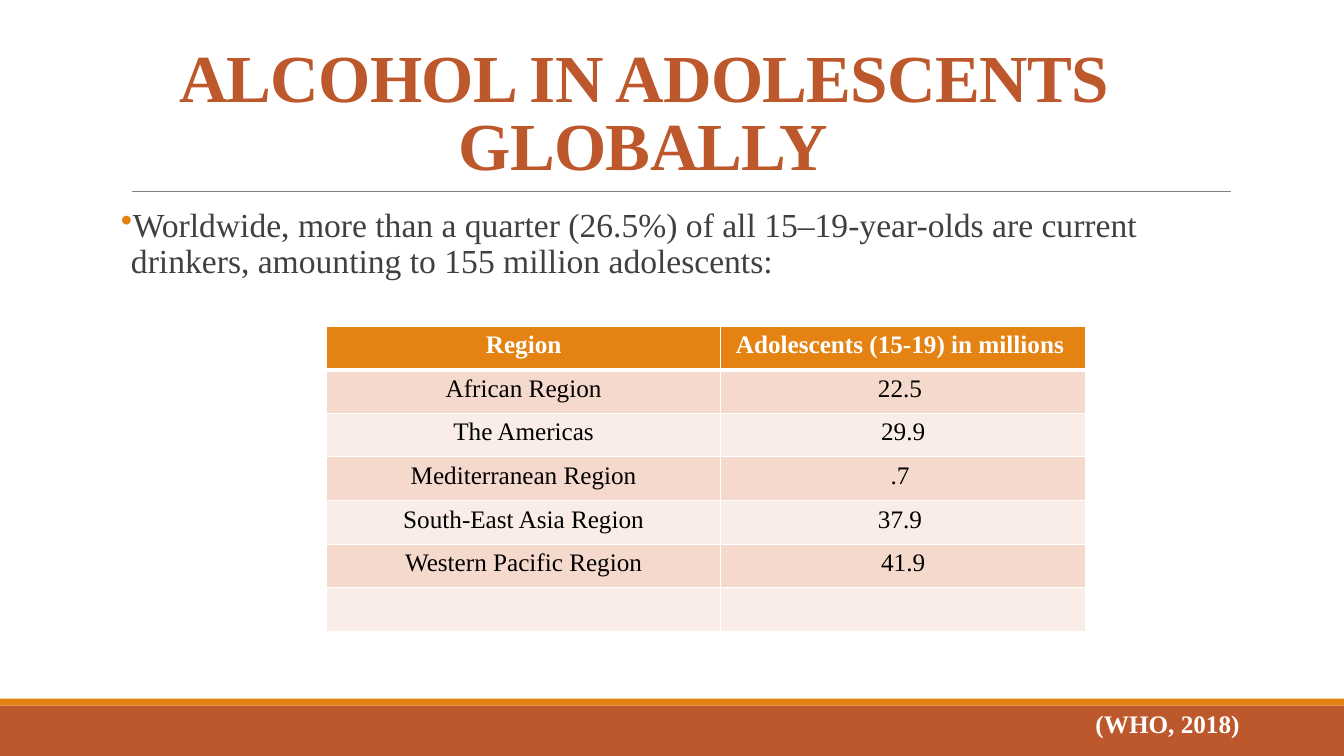
from dataclasses import dataclass

from lxml.etree import SubElement
from pptx import Presentation
from pptx.dml.color import RGBColor
from pptx.enum.shapes import MSO_CONNECTOR, MSO_SHAPE
from pptx.enum.text import MSO_ANCHOR as Anchor, PP_ALIGN as Align
from pptx.oxml import parse_xml
from pptx.oxml.ns import nsdecls, qn
from pptx.util import Pt

FONT = "Times New Roman"
RUST, ORANGE, WHITE, BLACK = "BD582C", "E48312", "FFFFFF", "000000"
BANDS = ("FAEDE7", "F5D9CC")
COLUMN_WIDTHS = (281.5, 260.7)
ROW_HEIGHT = 31.17
ROWS = (
    ("Region", "Adolescents (15-19) in millions "),
    ("African Region", "22.5 "),
    ("The Americas", "29.9"),
    ("Mediterranean Region", ".7 "),
    ("South-East Asia Region", "37.9 "),
    ("Western Pacific Region", "41.9"),
    ("", ""),
)


@dataclass
class Bar:
    top: float
    height: float
    color: str


BARS = (Bar(504, 36, RUST), Bar(499, 5, ORANGE))


def rgb(color: str) -> RGBColor:
    return RGBColor.from_string(color)


def write(frame, text: str, *, size=18, color=BLACK, bold=False, align=Align.LEFT,
          line_spacing=1.0, before=0, after=0, tracking=0):
    frame.word_wrap = True
    para = frame.paragraphs[0]
    para.alignment = align
    para.line_spacing = line_spacing
    para.space_before, para.space_after = Pt(before), Pt(after)
    span = para.add_run()
    span.text = text
    span.font.name, span.font.size, span.font.bold = FONT, Pt(size), bold
    span.font.color.rgb = rgb(color)
    if tracking:
        span.font._element.set("spc", str(int(tracking * 100)))
    return para


def add_box(page, left: float, top: float, width: float, height: float):
    return page.shapes.add_textbox(Pt(left), Pt(top), Pt(width), Pt(height)).text_frame


def add_bullet(para, color: str, indent: float) -> None:
    properties = para._p.get_or_add_pPr()
    properties.set("marL", str(Pt(indent)))
    properties.set("indent", str(-Pt(indent)))
    bullet_color = SubElement(properties, qn("a:buClr"))
    SubElement(bullet_color, qn("a:srgbClr"), val=color)
    SubElement(properties, qn("a:buChar"), char="•")


def add_bar(page, bar: Bar, width: int) -> None:
    shape = page.shapes.add_shape(MSO_SHAPE.RECTANGLE, 0, Pt(bar.top), width, Pt(bar.height))
    shape.shadow.inherit = False
    shape.fill.solid()
    shape.fill.fore_color.rgb = rgb(bar.color)
    shape.line.fill.background()


def add_rule(page, left: float, right: float, y: float) -> None:
    rule = page.shapes.add_connector(MSO_CONNECTOR.STRAIGHT, Pt(left), Pt(y), Pt(right), Pt(y))
    rule.line.color.rgb = rgb("808080")
    rule.line.width = Pt(0.5)
    SubElement(rule._element.spPr, qn("a:effectLst"))


def set_borders(cell, top: float, bottom: float) -> None:
    properties = cell._tc.get_or_add_tcPr()
    widths = {"lnL": 1, "lnR": 1, "lnT": top, "lnB": bottom}
    for position, (side, width) in enumerate(widths.items()):
        properties.insert(position, parse_xml(
            f'<a:{side} {nsdecls("a")} w="{Pt(width)}"><a:solidFill>'
            f'<a:srgbClr val="{WHITE}"/></a:solidFill></a:{side}>'))


def add_region_table(page, left: float, top: float) -> None:
    table = page.shapes.add_table(
        len(ROWS), len(COLUMN_WIDTHS), Pt(left), Pt(top),
        Pt(sum(COLUMN_WIDTHS)), Pt(ROW_HEIGHT * len(ROWS))).table
    table.first_row = table.horz_banding = False
    for column, width in zip(table.columns, COLUMN_WIDTHS):
        column.width = Pt(width)
    for index, texts in enumerate(ROWS):
        table.rows[index].height = Pt(ROW_HEIGHT)
        header = index == 0
        for cell, text in zip(table.rows[index].cells, texts):
            cell.fill.solid()
            cell.fill.fore_color.rgb = rgb(ORANGE if header else BANDS[index % 2])
            set_borders(cell, top=3 if index == 1 else 1, bottom=3 if header else 1)
            if text:
                write(cell.text_frame, text, bold=header, align=Align.CENTER,
                      color=WHITE if header else BLACK)


def main() -> None:
    """Build the slide on adolescent alcohol use and save it."""
    deck = Presentation()
    deck.slide_width, deck.slide_height = Pt(960), Pt(540)
    page = deck.slides.add_slide(deck.slide_layouts[6])
    for bar in BARS:
        add_bar(page, bar, deck.slide_width)
    add_rule(page, 94.3, 879, 136.6)

    body = add_box(page, 86.4, 145.4, 792, 316.8)
    body.margin_left = body.margin_right = 0
    statement = write(
        body, "Worldwide, more than a quarter (26.5%) of all 15–19-year-olds are current "
        "drinkers, amounting to 155 million adolescents:",
        size=24, color="404040", line_spacing=0.9, before=12, after=2)
    add_bullet(statement, ORANGE, 7.2)

    add_region_table(page, 233.3, 232.9)
    write(add_box(page, 775.4, 502.6, 118.8, 28.8), "(WHO, 2018)", color=WHITE, bold=True)

    title = add_box(page, 25.9, 20.9, 867.6, 114.5)
    title.vertical_anchor = Anchor.BOTTOM
    write(title, "ALCOHOL IN ADOLESCENTS GLOBALLY", size=48, color=RUST, bold=True,
          align=Align.CENTER, line_spacing=0.85, tracking=-0.5)
    deck.save("out.pptx")


if __name__ == "__main__":
    main()
